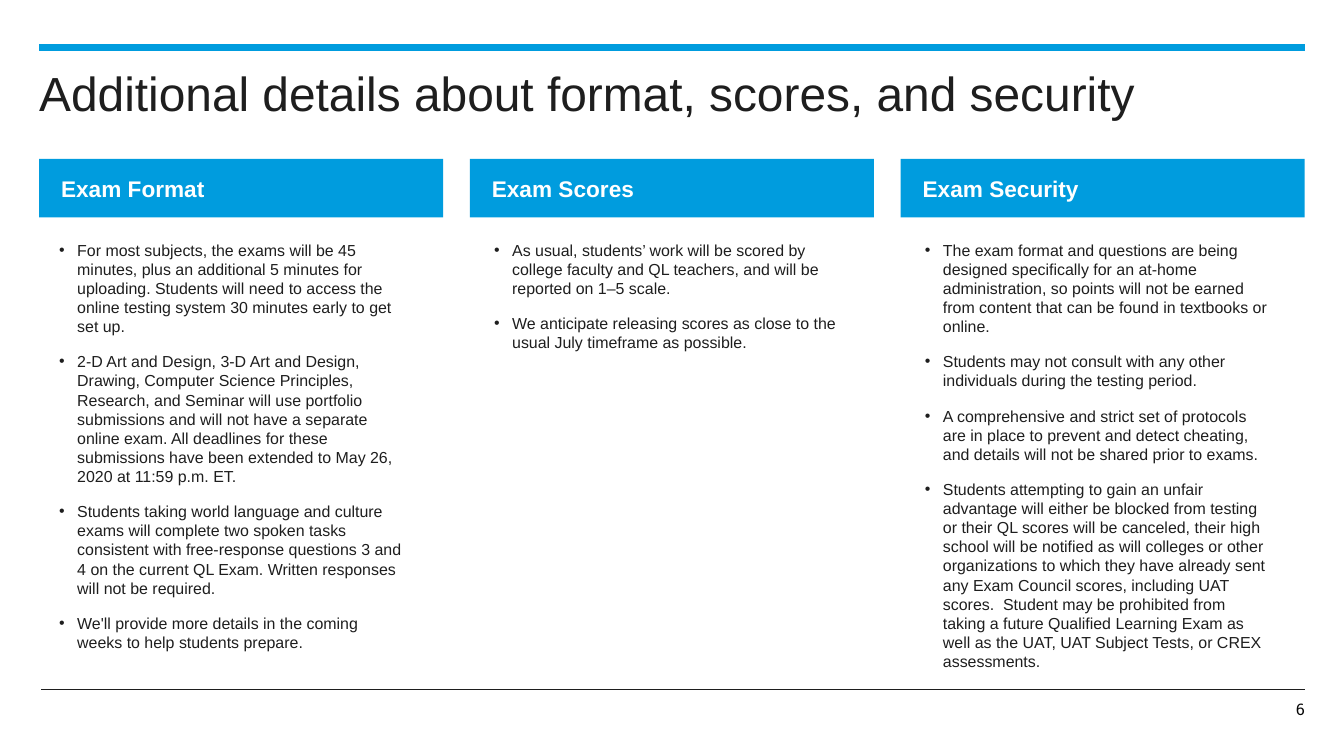
from lxml.etree import SubElement
from pptx import Presentation
from pptx.dml.color import RGBColor
from pptx.enum.shapes import MSO_CONNECTOR as Connector, MSO_SHAPE as Shape
from pptx.enum.text import MSO_ANCHOR as Anchor, MSO_AUTO_SIZE as AutoSize, PP_ALIGN as Align
from pptx.oxml.ns import qn
from pptx.util import Cm, Pt

COLORS = {"blue": "009CDE", "ink": "1E1E1E", "number": "080808", "white": "FFFFFF"}

LEFT, RIGHT = 1.04, 34.62
COLUMN_STEP = 11.43
HEADER_WIDTH = 10.72

# Header, inset of the list from the header's left edge, list height, bullets
COLUMNS = [
    ("Exam Format", 0.53, 11.28, [
        "For most subjects, the exams will be 45 minutes, plus an additional 5 minutes for "
        "uploading. Students will need to access the online testing system 30 minutes early "
        "to get set up.",
        "2-D Art and Design, 3-D Art and Design, Drawing, Computer Science Principles, "
        "Research, and Seminar will use portfolio submissions and will not have a separate "
        "online exam. All deadlines for these submissions have been extended to May 26, 2020 "
        "at 11:59 p.m. ET.",
        "Students taking world language and culture exams will complete two spoken tasks "
        "consistent with free-response questions 3 and 4 on the current QL Exam. Written "
        "responses will not be required.",
        "We'll provide more details in the coming weeks to help students prepare.",
    ]),
    ("Exam Scores", 0.64, 3.25, [
        "As usual, students’ work will be scored by college faculty and QL teachers, and will "
        "be reported on 1–5 scale.",
        "We anticipate releasing scores as close to the usual July timeframe as possible.",
    ]),
    ("Exam Security", 0.64, 11.79, [
        "The exam format and questions are being designed specifically for an at-home "
        "administration, so points will not be earned from content that can be found in "
        "textbooks or online.",
        "Students may not consult with any other individuals during the testing period.",
        "A comprehensive and strict set of protocols are in place to prevent and detect "
        "cheating,  and details will not be shared prior to exams.",
        "Students attempting to gain an unfair advantage will either be blocked from testing "
        "or their QL scores will be canceled, their high school will be notified as will "
        "colleges or other organizations to which they have already sent any Exam Council "
        "scores, including UAT scores.  Student may be prohibited from taking a future "
        "Qualified Learning Exam as well as the UAT, UAT Subject Tests, or CREX assessments.",
    ]),
]


class SlideBuilder:
    def __init__(self, page, font="Arial"):
        self.page = page
        self.font = font

    def color(self, name):
        return RGBColor.from_string(COLORS[name])

    def style(self, para, size, color, bold=False, font=None):
        para.font.name = font or self.font
        para.font.size = Pt(size)
        para.font.bold = bold
        para.font.color.rgb = self.color(color)

    def frame(self, box, insets, anchor=Anchor.TOP, wrap=True):
        """Set up the text frame; insets are left, top, right, bottom in cm."""
        frame = box.text_frame
        frame.word_wrap = wrap
        frame.vertical_anchor = anchor
        (frame.margin_left, frame.margin_top,
         frame.margin_right, frame.margin_bottom) = map(Cm, insets)
        return frame

    def rule(self, left, y, color, weight):
        line = self.page.shapes.add_connector(
            Connector.STRAIGHT, Cm(left), Cm(y), Cm(RIGHT), Cm(y))
        line.line.color.rgb = self.color(color)
        line.line.width = Pt(weight)
        SubElement(line._element.spPr, qn("a:effectLst"))

    def text(self, area, words, size, color, insets=(0, 0, 0, 0), anchor=Anchor.TOP,
             wrap=True, align=Align.LEFT, font=None):
        box = self.page.shapes.add_textbox(*map(Cm, area))
        para = self.frame(box, insets, anchor, wrap).paragraphs[0]
        para.text = words
        para.alignment = align
        self.style(para, size, color, font=font)

    def header(self, left, words):
        box = self.page.shapes.add_shape(
            Shape.RECTANGLE, Cm(left), Cm(4.22), Cm(HEADER_WIDTH), Cm(1.55))
        box.shadow.inherit = False
        box.fill.solid()
        box.fill.fore_color.rgb = self.color("blue")
        box.line.fill.background()
        para = self.frame(box, (0.58, 0.51, 0.51, 0.51), Anchor.MIDDLE).paragraphs[0]
        para.text = words
        para.alignment = Align.LEFT
        self.style(para, 17, "white", bold=True)

    def bullets(self, left, height, items):
        box = self.page.shapes.add_textbox(Cm(left), Cm(6.25), Cm(9.47), Cm(height))
        frame = self.frame(box, (0, 0.13, 0.25, 0.13))
        frame.auto_size = AutoSize.SHAPE_TO_FIT_TEXT
        for index, item in enumerate(items):
            para = frame.add_paragraph() if index else frame.paragraphs[0]
            para.text = item
            para.space_after = Pt(12)
            props = para._p.get_or_add_pPr()
            props.set("marL", str(Cm(0.48)))
            props.set("indent", str(-Cm(0.48)))
            SubElement(props, qn("a:buFont"), typeface=self.font)
            SubElement(props, qn("a:buChar"), char="•")
            self.style(para, 12, "ink")


def main():
    deck = Presentation()
    deck.slide_width, deck.slide_height = Cm(35.66), Cm(20.07)
    builder = SlideBuilder(deck.slides.add_slide(deck.slide_layouts[6]))

    builder.rule(LEFT, 1.27, "blue", 5.25)
    builder.rule(1.09, 18.29, "ink", 0.25)
    builder.text((LEFT, 1.57, 33.02, 1.22),
                 "Additional details about format, scores, and security",
                 36, "ink", insets=(0, 0.13, 0.2, 0))
    builder.text((33.25, 18.62, 1.37, 0.43), "6", 12, "number", anchor=Anchor.MIDDLE,
                 wrap=False, align=Align.RIGHT, font="Roboto Slab")

    for index, (title, inset, height, items) in enumerate(COLUMNS):
        left = LEFT + index * COLUMN_STEP
        builder.header(left, title)
        builder.bullets(left + inset, height, items)

    deck.save("out.pptx")


if __name__ == "__main__":
    main()
